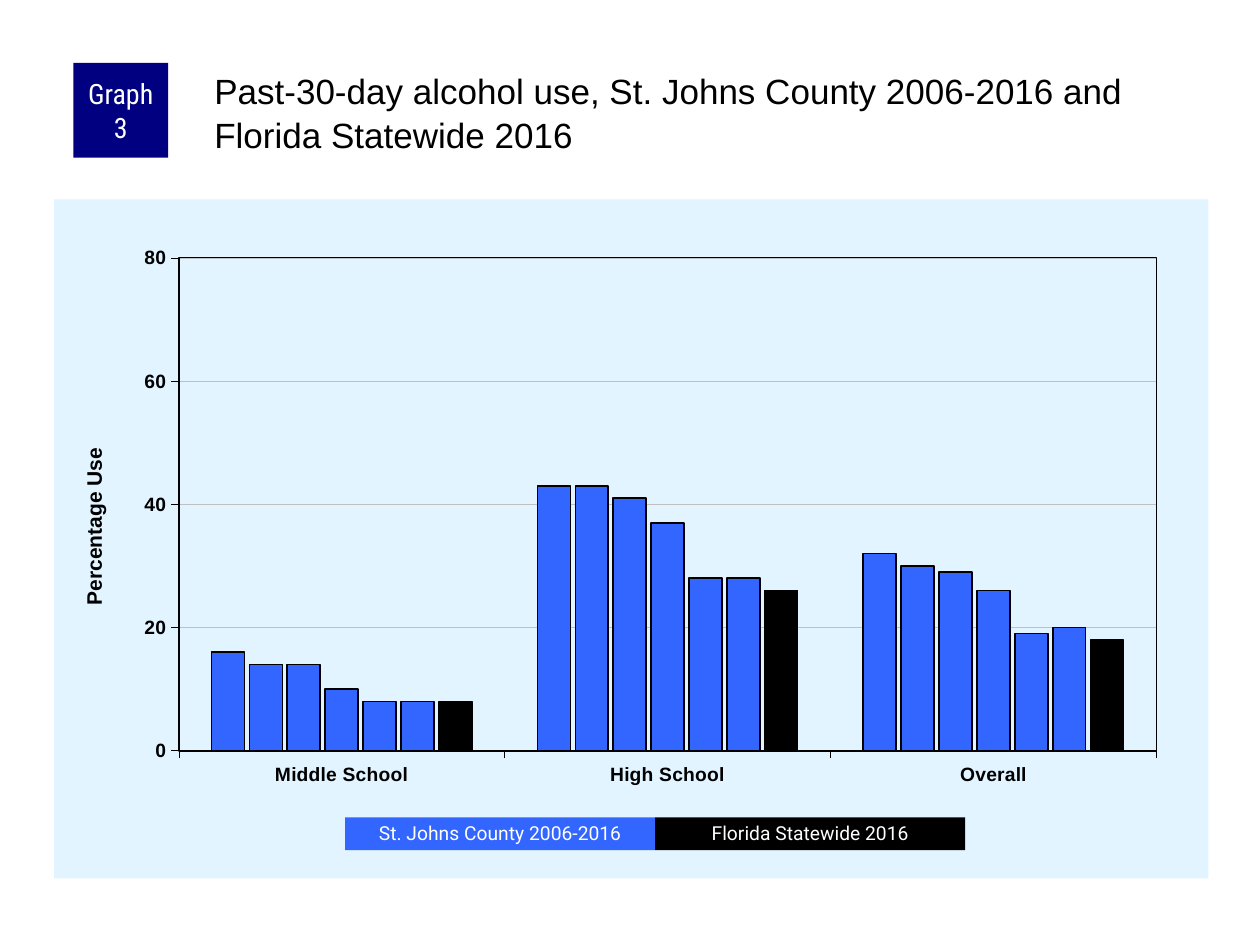
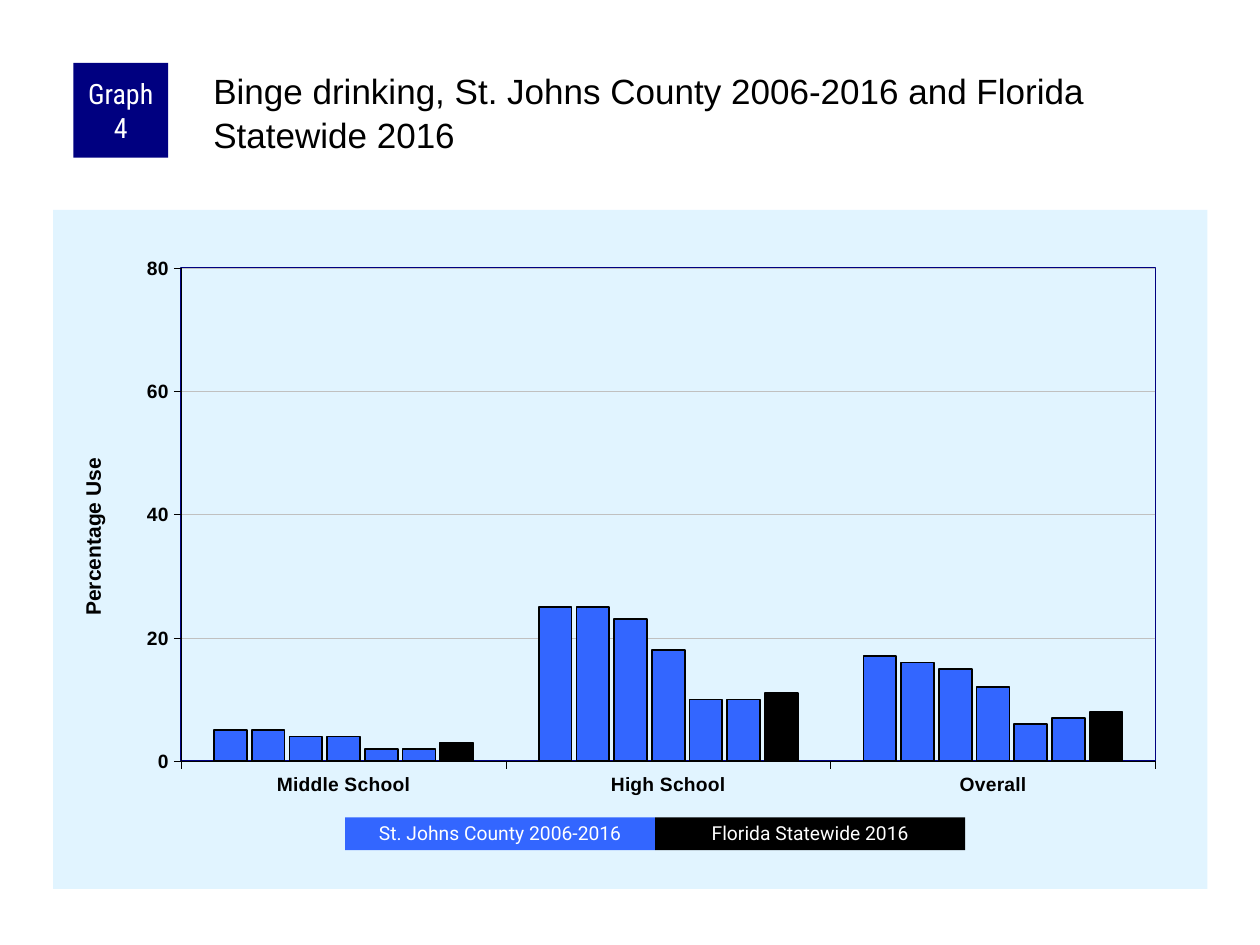
import pptx
import pptx.chart.data
import pptx.dml.color
import pptx.enum.chart
import pptx.enum.text
import pptx.enum.shapes
import pptx.oxml
import pptx.oxml.ns
import pptx.util

Cm = pptx.util.Cm
Pt = pptx.util.Pt
qn = pptx.oxml.ns.qn

NAVY, BLUE, BLACK, WHITE = "000080", "3366FF", "000000", "FFFFFF"
PANEL, GRID = "E1F4FF", "C0C0C0"
TITLE_FONT, LABEL_FONT, BADGE_FONT = "Arial", "Roboto", "Roboto Condensed"

CATEGORIES = ["Middle School", "High School", "Overall"]
LEGEND = [("St. Johns County 2006-2016", BLUE), ("Florida Statewide 2016", BLACK)]

# Each row of values is one series; the last row is the statewide result.
GRAPHS = [
    dict(
        number=3,
        title="Past-30-day alcohol use, St. Johns County 2006-2016 and Florida Statewide 2016",
        title_left=4.24,
        chart_at=(1.09, 4.02),
        plot=(0.108, 0.086, 0.847, 0.726),
        border=BLACK,
        rows=[(16, 43, 32), (14, 43, 30), (14, 41, 29), (10, 37, 26),
              (8, 28, 19), (8, 28, 20), (8, 26, 18)],
    ),
    dict(
        number=4,
        title="Binge drinking, St. Johns County 2006-2016 and Florida Statewide 2016",
        title_left=4.22,
        chart_at=(1.07, 4.23),
        plot=(0.111, 0.086, 0.844, 0.726),
        border=NAVY,
        rows=[(5, 25, 17), (5, 25, 16), (4, 23, 15), (4, 18, 12),
              (2, 10, 6), (2, 10, 7), (3, 11, 8)],
    ),
]


def rgb(value):
    return pptx.dml.color.RGBColor.from_string(value)


def style_font(font, name, size, color, bold=False):
    font.name = name
    font.size = Pt(size)
    font.bold = bold
    font.color.rgb = rgb(color)


def style_line(line, color, width):
    line.color.rgb = rgb(color)
    line.width = Pt(width)


def set_margins(tf, left, top, right, bottom):
    tf.margin_left, tf.margin_top = Cm(left), Cm(top)
    tf.margin_right, tf.margin_bottom = Cm(right), Cm(bottom)


def add_title(slide, text, left):
    title = slide.shapes.title
    title.left, title.top, title.width, title.height = Cm(left), Cm(1.27), Cm(20.12), Cm(2.11)
    tf = title.text_frame
    tf.text = text
    tf.word_wrap = True
    tf.auto_size = pptx.enum.text.MSO_AUTO_SIZE.NONE
    tf.vertical_anchor = pptx.enum.text.MSO_ANCHOR.TOP
    set_margins(tf, 0.08, 0.08, 0, 0)
    p = tf.paragraphs[0]
    p.alignment = pptx.enum.text.PP_ALIGN.LEFT
    p.line_spacing = 1.05
    style_font(p.font, TITLE_FONT, 20, BLACK)


def add_label_box(slide, text, box, fill, font, size):
    """Add a filled rectangle with centred white text."""
    sp = slide.shapes.add_shape(
        pptx.enum.shapes.MSO_SHAPE.RECTANGLE, *(Cm(v) for v in box))
    sp.shadow.inherit = False
    sp.fill.solid()
    sp.fill.fore_color.rgb = rgb(fill)
    sp.line.fill.background()
    tf = sp.text_frame
    tf.text = text
    tf.word_wrap = True
    tf.vertical_anchor = pptx.enum.text.MSO_ANCHOR.MIDDLE
    set_margins(tf, 0.13, 0, 0.13, 0)
    p = tf.paragraphs[0]
    p.alignment = pptx.enum.text.PP_ALIGN.CENTER
    style_font(p.font, font, size, WHITE)
    return sp


def add_legend(slide):
    width = 6.25
    for i, (text, color) in enumerate(LEGEND):
        box = (6.96 + i * width, 16.48, width, 0.66)
        sp = add_label_box(slide, text, box, color, LABEL_FONT, 11)
        sp.text_frame.paragraphs[0].line_spacing = 0.9


def set_layout(parent, x, y, w=None, h=None):
    """Place a chart part by fractions of the chart's size."""
    old = parent.find(qn("c:layout"))
    if old is not None:
        parent.remove(old)
    target = "" if w is None else '<c:layoutTarget val="inner"/>'
    modes = '<c:xMode val="edge"/><c:yMode val="edge"/>'
    values = "".join(f'<c:{key} val="{value}"/>'
                     for key, value in zip("xywh", (x, y, w, h)) if value is not None)
    layout = pptx.oxml.parse_xml(
        f'<c:layout {pptx.oxml.ns.nsdecls("c")}><c:manualLayout>'
        f"{target}{modes}{values}</c:manualLayout></c:layout>")
    tx = parent.find(qn("c:tx"))
    if tx is None:
        parent.insert(0, layout)
    else:
        tx.addnext(layout)


def area_format(fill, line):
    """Return shape properties; None means no fill or no line."""
    def paint(color):
        return f'<a:solidFill><a:srgbClr val="{color}"/></a:solidFill>' if color else "<a:noFill/>"
    return pptx.oxml.parse_xml(
        f'<c:spPr {pptx.oxml.ns.nsdecls("c", "a")}>{paint(fill)}'
        f'<a:ln w="{Pt(1)}">{paint(line)}</a:ln></c:spPr>')


def style_axis(axis):
    axis.major_tick_mark = pptx.enum.chart.XL_TICK_MARK.OUTSIDE
    axis.minor_tick_mark = pptx.enum.chart.XL_TICK_MARK.NONE
    style_font(axis.tick_labels.font, TITLE_FONT, 11, BLACK, bold=True)
    style_line(axis.format.line, BLACK, 0.25)


def style_value_axis(axis):
    style_axis(axis)
    axis.minimum_scale, axis.maximum_scale, axis.major_unit = 0, 80, 20
    axis.has_major_gridlines = True
    style_line(axis.major_gridlines.format.line, GRID, 0.25)
    axis.has_title = True
    tf = axis.axis_title.text_frame
    tf.text = "Percentage Use"
    style_font(tf.paragraphs[0].font, TITLE_FONT, 12, BLACK, bold=True)
    set_layout(axis.axis_title.element if hasattr(axis.axis_title, "element")
               else axis.element.find(qn("c:title")), 0.02, 0.36)


def add_usage_chart(slide, graph):
    data = pptx.chart.data.CategoryChartData(number_format="0")
    data.categories = CATEGORIES
    for i, row in enumerate(graph["rows"], 1):
        data.add_series(f"Series {i}", row)
    left, top = graph["chart_at"]
    chart = slide.shapes.add_chart(
        pptx.enum.chart.XL_CHART_TYPE.COLUMN_CLUSTERED,
        Cm(left), Cm(top), Cm(23.27), Cm(13.69), data).chart
    chart.has_legend = False
    chart.has_title = False
    style_font(chart.font, TITLE_FONT, 8, BLACK)
    style_axis(chart.category_axis)
    style_value_axis(chart.value_axis)

    plot = chart.plots[0]
    plot.gap_width, plot.overlap = 200, -15
    plot.vary_by_categories = False
    statewide = len(graph["rows"]) - 1
    for i, series in enumerate(plot.series):
        series.invert_if_negative = False
        series.format.fill.solid()
        series.format.fill.fore_color.rgb = rgb(BLACK if i == statewide else BLUE)
        style_line(series.format.line, BLACK, 1)

    chart_part = chart.element.find(qn("c:chart"))
    chart_part.addnext(area_format(PANEL, None))
    plot_area = chart_part.find(qn("c:plotArea"))
    set_layout(plot_area, *graph["plot"])
    plot_area.append(area_format(None, graph["border"]))


def add_graph_slide(prs, graph):
    slide = prs.slides.add_slide(prs.slide_layouts.get_by_name("Title Only"))
    add_title(slide, graph["title"], graph["title_left"])
    add_usage_chart(slide, graph)
    add_label_box(slide, f"Graph {graph['number']}", (1.48, 1.27, 1.91, 1.91),
                  NAVY, BADGE_FONT, 16)
    add_legend(slide)


def main():
    prs = pptx.Presentation()
    prs.slide_width, prs.slide_height = Cm(25.4), Cm(19.05)
    for graph in GRAPHS:
        add_graph_slide(prs, graph)
    prs.save("out.pptx")


if __name__ == "__main__":
    main()
